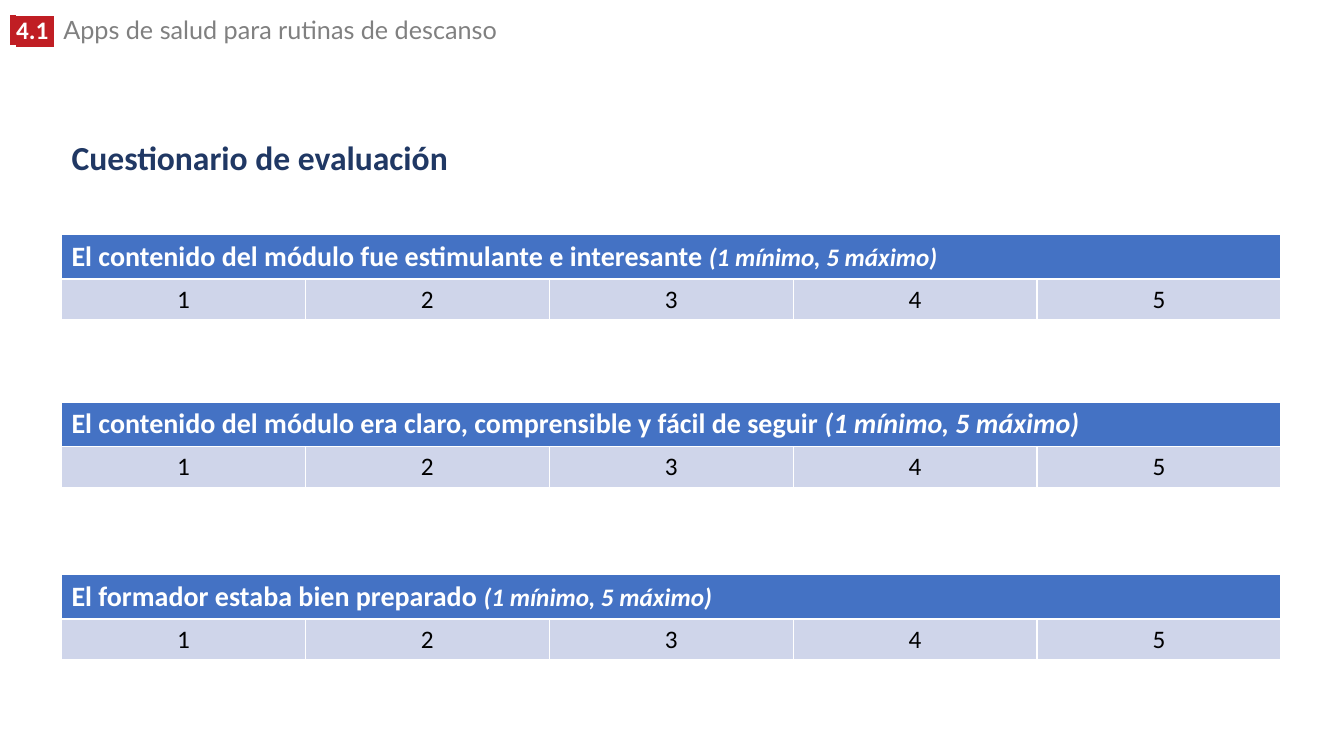
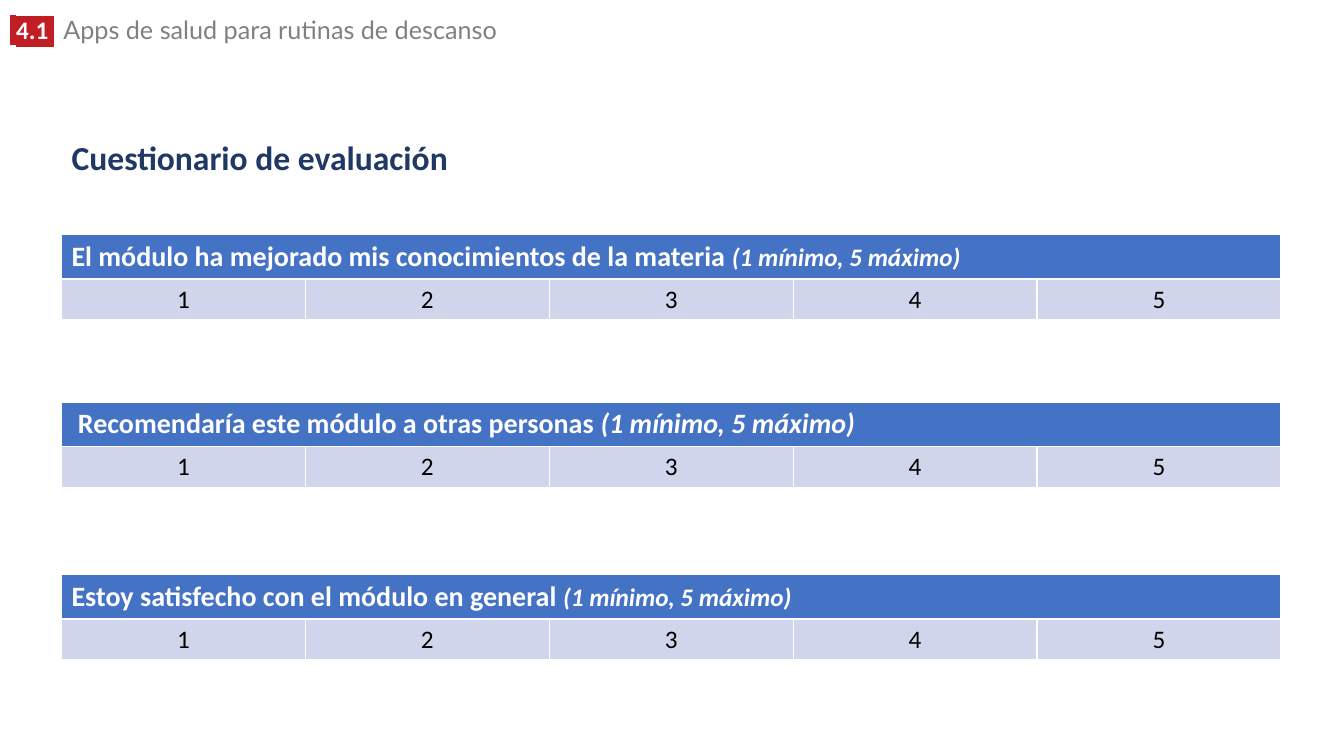
from lxml.etree import SubElement
from pptx import Presentation
from pptx.dml.color import RGBColor
from pptx.enum.text import MSO_ANCHOR, MSO_AUTO_SIZE, PP_ALIGN
from pptx.oxml.ns import qn
from pptx.util import Pt

WHITE, BLACK, GREY = "FFFFFF", "000000", "808080"
RED, NAVY, BLUE, PALE = "C01E24", "203864", "4472C4", "CFD5EA"
LEFT, WIDE = 43.9, 871.2
TOPS = [167.6, 287.3, 410.4]
SCALE = "(1 mínimo, 5 máximo)"

PAGES = [
    [("El contenido del módulo fue estimulante e interesante ", 18),
     ("El contenido del módulo era claro, comprensible y fácil de seguir ", 20),
     ("El formador estaba bien preparado ", 18)],
    [("El módulo ha mejorado mis conocimientos de la materia ", 18),
     (" Recomendaría este módulo a otras personas ", 20),
     ("Estoy satisfecho con el módulo en general ", 18)],
]


def color(code):
    return RGBColor.from_string(code)


def add_run(para, text, size, code, bold=False, italic=False, face="Calibri", mark=None):
    run = para.add_run()
    run.text = text
    font = run.font
    font.size, font.bold, font.italic, font.name = Pt(size), bold, italic, face
    font.color.rgb = color(code)
    if mark:
        props = run._r.get_or_add_rPr()
        light = SubElement(props, qn("a:highlight"))
        SubElement(light, qn("a:srgbClr"), val=mark)
        props.find(qn("a:solidFill")).addnext(light)


deck = Presentation()
deck.slide_width, deck.slide_height = Pt(960), Pt(540)
layout = deck.slide_layouts[5]

for page, items in enumerate(PAGES):
    slide = deck.slides.add_slide(layout)

    if page == 0:
        head = slide.shapes.add_textbox(Pt(0), Pt(6.5), Pt(685.4), Pt(31))
        frame = head.text_frame
        frame.word_wrap = True
        frame.auto_size = MSO_AUTO_SIZE.SHAPE_TO_FIT_TEXT
        para = frame.paragraphs[0]
        para.line_spacing = 0.8
        add_run(para, " ", 18, WHITE, bold=True, face="Lato", mark=RED)
        add_run(para, "4.1 ", 18, WHITE, bold=True, mark=RED)
        add_run(para, " ", 24, BLACK, face="Arial")
        add_run(para, "Apps de salud para rutinas de descanso", 18, GREY, face="Lato")
        layout.shapes._spTree.append(head._element)

    title = slide.shapes.title
    title.left, title.top, title.width, title.height = Pt(LEFT), Pt(85), Pt(WIDE), Pt(57.6)
    title.text_frame.vertical_anchor = MSO_ANCHOR.MIDDLE
    para = title.text_frame.paragraphs[0]
    para.alignment, para.line_spacing = PP_ALIGN.LEFT, 0.9
    add_run(para, "Cuestionario de evaluación", 24, NAVY, bold=True)

    for top, (text, size) in zip(TOPS, items):
        table = slide.shapes.add_table(2, 5, Pt(LEFT), Pt(top), Pt(WIDE), Pt(60.4)).table
        table.rows[0].height, table.rows[1].height = Pt(31.2), Pt(29.2)
        first = table.cell(0, 0)
        first.merge(table.cell(0, 4))
        first.fill.solid()
        first.fill.fore_color.rgb = color(BLUE)
        para = first.text_frame.paragraphs[0]
        add_run(para, text, 20, WHITE, bold=True)
        add_run(para, SCALE, size, WHITE, bold=True, italic=True)
        for col in range(5):
            cell = table.cell(1, col)
            cell.fill.solid()
            cell.fill.fore_color.rgb = color(PALE)
            para = cell.text_frame.paragraphs[0]
            para.alignment = PP_ALIGN.CENTER
            add_run(para, str(col + 1), 18, BLACK)

deck.save("out.pptx")
